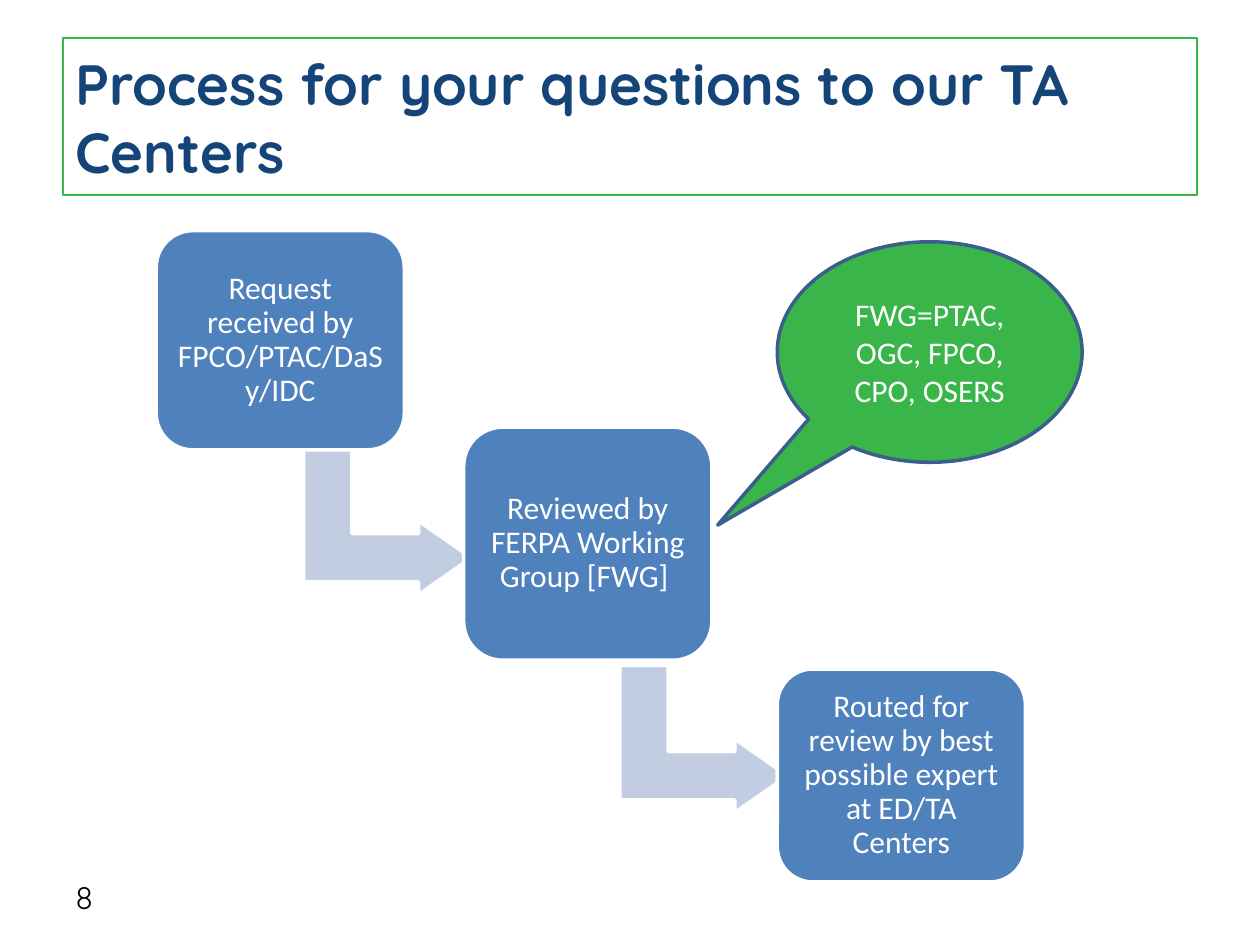
import dataclasses

import pptx
import pptx.dml.color
import pptx.enum.shapes
import pptx.enum.text
import pptx.util

Pt = pptx.util.Pt
Shape = pptx.enum.shapes.MSO_SHAPE
Align = pptx.enum.text.PP_ALIGN


@dataclasses.dataclass(frozen=True)
class Theme:
    navy: str = "154578"
    green: str = "39B54A"
    step_blue: str = "4F81BD"
    arrow_blue: str = "C2CDE1"
    outline_blue: str = "3A5F8C"
    white: str = "FFFFFF"
    black: str = "000000"
    heading_font: str = "Quicksand"
    body_font: str = "Calibri"
    title_size: float = 32.4
    body_size: float = 18


class ProcessSlide:
    def __init__(self, theme, slide):
        self.theme = theme
        self.slide = slide

    def shape(self, preset, box, fill, line, line_width, adjustments=()):
        item = self.slide.shapes.add_shape(preset, *map(Pt, box))
        item.shadow.inherit = False
        for index, value in enumerate(adjustments):
            item.adjustments[index] = value
        if fill:
            item.fill.solid()
            item.fill.fore_color.rgb = pptx.dml.color.RGBColor.from_string(fill)
        else:
            item.fill.background()
        item.line.color.rgb = pptx.dml.color.RGBColor.from_string(line)
        item.line.width = Pt(line_width)
        return item

    def label(self, item, wording, color, align=Align.CENTER, spacing=1.0, margin=None, **font):
        frame = item.text_frame
        frame_format = {"word_wrap": True, "vertical_anchor": pptx.enum.text.MSO_ANCHOR.MIDDLE}
        if margin is not None:
            for side in ("left", "top", "right", "bottom"):
                frame_format[f"margin_{side}"] = Pt(margin)
        for name, value in frame_format.items():
            setattr(frame, name, value)
        paragraph = frame.paragraphs[0]
        paragraph.alignment = align
        paragraph.line_spacing = spacing
        run = paragraph.add_run()
        run.text = wording
        font_format = {"name": self.theme.body_font, "size": Pt(self.theme.body_size)} | font
        for name, value in font_format.items():
            setattr(run.font, name, value)
        run.font.color.rgb = pptx.dml.color.RGBColor.from_string(color)

    def title(self, wording, box):
        frame = self.shape(Shape.RECTANGLE, box, None, self.theme.green, 1)
        self.label(frame, wording, self.theme.navy, Align.LEFT,
                   name=self.theme.heading_font, size=Pt(self.theme.title_size), bold=True)

    def page_number(self, wording, box):
        number = self.slide.shapes.add_textbox(*map(Pt, box))
        self.label(number, wording, self.theme.black, Align.LEFT, name=self.theme.heading_font)

    def arrow(self, left, top):
        bend = self.shape(Shape.BENT_UP_ARROW, (left, top, 84.2, 95.8), self.theme.arrow_blue,
                          self.theme.white, 2, (0.328, 0.25, 0.358))
        bend.rotation = 90

    def step(self, wording, left, top, height):
        card = self.shape(Shape.ROUNDED_RECTANGLE, (left, top, 141.8, height),
                          self.theme.step_blue, self.theme.white, 2, (0.167,))
        self.label(card, wording, self.theme.white, spacing=0.9, margin=5)

    def callout(self, wording, box):
        bubble = self.shape(Shape.OVAL_CALLOUT, box, self.theme.green,
                            self.theme.outline_blue, 2, (-0.696, 0.785))
        self.label(bubble, wording, self.theme.white)


def main():
    deck = pptx.Presentation()
    deck.slide_width, deck.slide_height = Pt(720), Pt(540)
    page = ProcessSlide(Theme(), deck.slides.add_slide(deck.slide_layouts[6]))

    page.title("Process for your questions to our TA Centers", (36, 21.6, 648, 90))
    page.page_number("8", (36, 498.2, 167.8, 28.8))
    for left, top in ((179.3, 249.8), (360, 374.4)):
        page.arrow(left, top)
    steps = (
        ("Request received by FPCO/PTAC/DaSy/IDC", 89.3, 131.8, 125.3),
        ("Reviewed by FERPA Working Group [FWG] ", 265, 244.1, 133.2),
        ("Routed for review by best possible expert at ED/TA Centers", 444.2, 382.3, 121.7),
    )
    for wording, left, top, height in steps:
        page.step(wording, left, top, height)
    page.callout("FWG=PTAC, OGC, FPCO, CPO, OSERS", (444.2, 138.2, 174.2, 126))

    deck.save("out.pptx")


if __name__ == "__main__":
    main()
